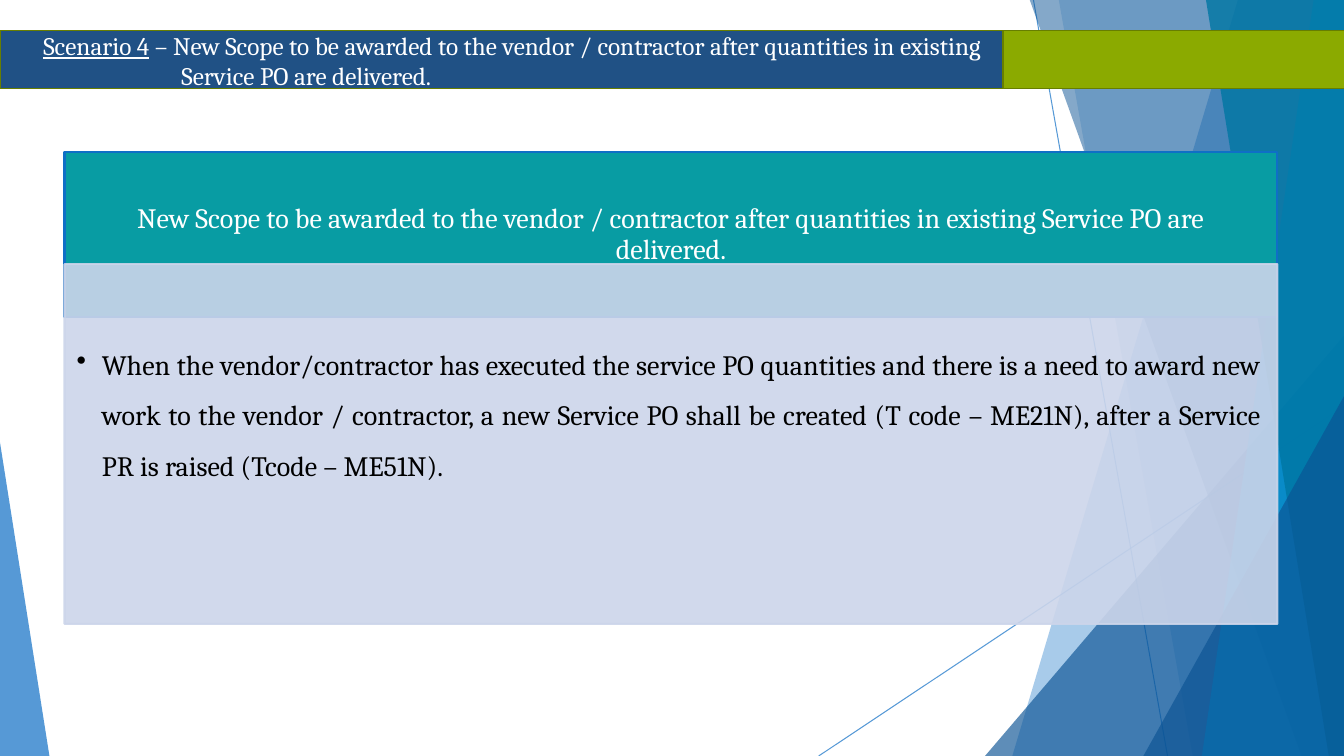
from dataclasses import dataclass
from typing import Optional

import pptx
import pptx.dml.color
import pptx.enum.shapes
import pptx.enum.text
import pptx.oxml.ns
import pptx.util
from lxml import etree

Inches = pptx.util.Inches
Pt = pptx.util.Pt
MSO_SHAPE = pptx.enum.shapes.MSO_SHAPE
ANCHOR = pptx.enum.text.MSO_ANCHOR
ALIGN = pptx.enum.text.PP_ALIGN
qn = pptx.oxml.ns.qn

W, H = 13.33, 7.5
FONT = "Cambria"
BLUE, NAVY = "0F6FC6", "0B5394"
SCOPE = ("New Scope to be awarded to the vendor / contractor after "
         "quantities in existing Service PO are delivered.")
ANSWER = ("When the vendor/contractor has executed the service PO quantities and "
          "there is a need to award new work to the vendor / contractor, a new "
          "Service PO shall be created (T code – ME21N), after a Service PR is "
          "raised (Tcode – ME51N).")


@dataclass
class Ray:
    """Straight line across the right-hand decoration."""
    x1: float
    y1: float
    x2: float
    y2: float


@dataclass
class Shard:
    """Full-height shape with a slanted left side, reaching the right edge."""
    top_x: float
    bottom_x: float
    color: str
    alpha: int


@dataclass
class Wedge:
    """Triangle standing on the bottom edge; apex 0 is left, 1 is right."""
    x: float
    y: float
    w: float
    apex: float
    color: str
    alpha: int


@dataclass
class Box:
    x: float
    y: float
    w: float
    h: float
    fill: str
    line: str
    line_w: float
    alpha: int = 100


def paint(fmt, color: str, alpha: int = 100) -> None:
    """Give a fill (or the fill of a line) a solid colour."""
    fmt.solid()
    fmt.fore_color.rgb = pptx.dml.color.RGBColor.from_string(color)
    if alpha < 100:
        clr = fmt._xPr.find(qn("a:solidFill"))[0]
        etree.SubElement(clr, qn("a:alpha"), val=str(alpha * 1000))


def add_ray(s, ray: Ray) -> None:
    c = s.shapes.add_connector(pptx.enum.shapes.MSO_CONNECTOR.STRAIGHT,
                               *map(Inches, (ray.x1, ray.y1, ray.x2, ray.y2)))
    c.line.width = Pt(0.75)
    paint(c.line.fill, BLUE, 70)
    etree.SubElement(c._element.spPr, qn("a:effectLst"))


def add_shard(s, shard: Shard) -> None:
    fb = s.shapes.build_freeform(Inches(shard.top_x), Inches(-0.01))
    corners = [(W, -0.01), (W, H), (shard.bottom_x, H)]
    fb.add_line_segments([(Inches(x), Inches(y)) for x, y in corners], close=True)
    sp = fb.convert_to_shape()
    sp.shadow.inherit = False
    paint(sp.fill, shard.color, shard.alpha)
    sp.line.fill.background()


def add_wedge(s, wedge: Wedge) -> None:
    sp = s.shapes.add_shape(MSO_SHAPE.ISOSCELES_TRIANGLE,
                            *map(Inches, (wedge.x, wedge.y, wedge.w, H - wedge.y)))
    sp.adjustments[0] = wedge.apex
    sp.shadow.inherit = False
    paint(sp.fill, wedge.color, wedge.alpha)
    sp.line.fill.background()


def add_box(s, box: Box):
    sp = s.shapes.add_shape(MSO_SHAPE.RECTANGLE,
                            *map(Inches, (box.x, box.y, box.w, box.h)))
    sp.shadow.inherit = False
    paint(sp.fill, box.fill, box.alpha)
    sp.line.width = Pt(box.line_w)
    paint(sp.line.fill, box.line, box.alpha)
    return sp


def set_frame(tf, anchor, left: float, top: float, right: float, bottom: float) -> None:
    tf.word_wrap = True
    tf.auto_size = pptx.enum.text.MSO_AUTO_SIZE.NONE
    tf.vertical_anchor = anchor
    tf.margin_left, tf.margin_right = Inches(left), Inches(right)
    tf.margin_top, tf.margin_bottom = Inches(top), Inches(bottom)


def hang(p, indent: float, bullet: Optional[str] = None) -> None:
    """Hanging indent, with a bullet if one is given."""
    pPr = p._p.get_or_add_pPr()
    pPr.set("marL", str(Inches(indent)))
    pPr.set("indent", str(-Inches(indent)))
    if bullet:
        etree.SubElement(pPr, qn("a:buChar"), char=bullet)


def style(p, size: float, color: str, align, spacing: float = 1.0) -> None:
    p.alignment = align
    p.line_spacing = spacing
    for r in p.runs:
        r.font.name = FONT
        r.font.size = Pt(size)
        paint(r.font.fill, color)


DECORATION = [
    (add_ray, Ray(10.25, 0, 11.58, H)),
    (add_ray, Ray(W, 4.03, 8.12, H)),
    (add_shard, Shard(12.28, 10.04, BLUE, 36)),
    (add_shard, Shard(10.5, 11.83, BLUE, 20)),
    (add_wedge, Wedge(9.77, 3.33, 3.56, 1, NAVY, 66)),
    (add_shard, Shard(10.21, 12.91, NAVY, 50)),
    (add_shard, Shard(13.03, 11.92, "009DD9", 70)),
    (add_shard, Shard(11.96, 13.18, "0076A3", 80)),
    (add_wedge, Wedge(11.34, 3.93, 1.99, 1, NAVY, 66)),
    (add_wedge, Wedge(0, 4.39, 0.49, 0, BLUE, 70)),
    (add_box, Box(0, 0.3, 9.95, 0.58, "205185", "677E00", 1)),
    (add_box, Box(9.95, 0.3, 3.39, 0.58, "8BAA00", "677E00", 1)),
]


def main() -> None:
    prs = pptx.Presentation()
    prs.slide_width, prs.slide_height = Inches(W), Inches(H)
    s = prs.slides.add_slide(prs.slide_layouts[5])

    # Background decoration and title bar
    for draw, item in DECORATION:
        draw(s, item)

    # Title, brought in front of its bar
    title = s.shapes.title
    title.left, title.top = Inches(0.33), Inches(0.25)
    title.width, title.height = Inches(9.64), Inches(0.71)
    title._element.getparent().append(title._element)
    tf = title.text_frame
    set_frame(tf, ANCHOR.TOP, 0.1, 0.05, 0.1, 0.05)
    p = tf.paragraphs[0]
    hang(p, 1.37)
    p.text = "Scenario 4"
    p.add_run().text = f" – {SCOPE}"
    style(p, 18, "FFFFFF", ALIGN.LEFT)
    p.runs[0].font.underline = True

    # Scenario heading
    heading = add_box(s, Box(0.64, 1.51, 12.03, 1.64, "089CA3", BLUE, 1.5))
    tf = heading.text_frame
    set_frame(tf, ANCHOR.MIDDLE, 0.16, 0.09, 0.16, 0.09)
    tf.text = SCOPE
    style(tf.paragraphs[0], 20, "FFFFFF", ALIGN.CENTER, 0.9)

    # Explanation panel, overlapping the heading
    panel = add_box(s, Box(0.64, 2.62, 12.03, 3.57, "CCD5EA", "CCD5EA", 1.5, 90))
    tf = panel.text_frame
    set_frame(tf, ANCHOR.TOP, 0.12, 0.66, 0.16, 0.17)
    tf.text = ANSWER
    p = tf.paragraphs[0]
    hang(p, 0.25, "•")
    style(p, 20, "000000", ALIGN.JUSTIFY, 1.5)

    prs.save("out.pptx")


if __name__ == "__main__":
    main()
